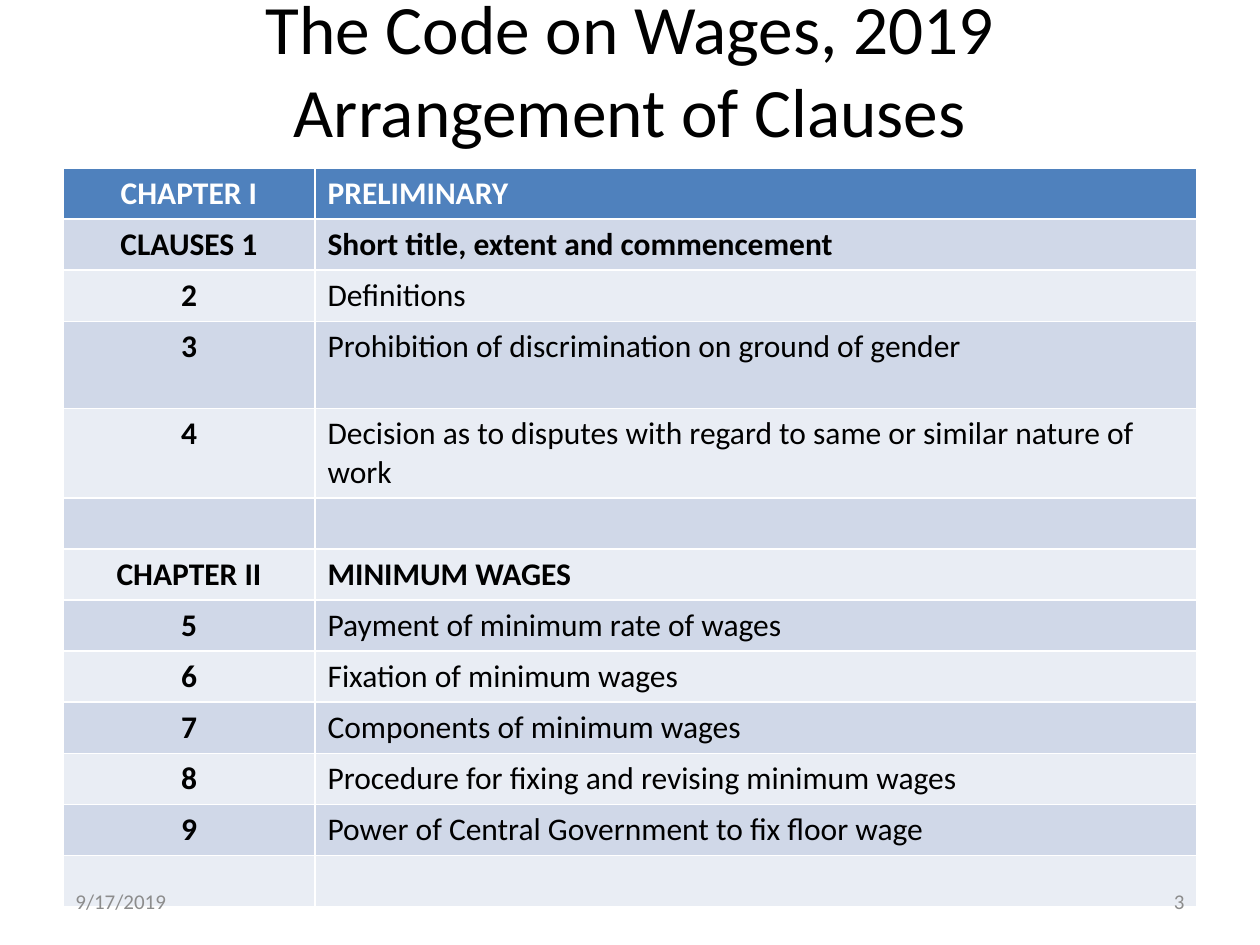
"""Build the slide listing the clauses of the Code on Wages, 2019."""
import pptx
import pptx.util
import pptx.dml.color
import pptx.enum.text

Pt = pptx.util.Pt
Align = pptx.enum.text.PP_ALIGN
Anchor = pptx.enum.text.MSO_ANCHOR


def paint(hue):
    return pptx.dml.color.RGBColor.from_string(hue)


def write(para, lines, size, hue, align, bold=False):
    para.alignment = align
    for num, line in enumerate(lines):
        if num:
            para.add_line_break()
        run = para.add_run()
        run.text = line
        run.font.name = "Calibri"
        run.font.size = Pt(size)
        run.font.bold = bold
        run.font.color.rgb = paint(hue)


deck = pptx.Presentation()
deck.slide_width, deck.slide_height = Pt(720), Pt(540)
slide = deck.slides.add_slide(deck.slide_layouts[6])

rows = [
    ("CHAPTER I", "PRELIMINARY", True),
    ("CLAUSES 1", "Short title, extent and commencement", True),
    ("2", "Definitions", False),
    ("3", "Prohibition of discrimination on ground of gender", False),
    ("4", "Decision as to disputes with regard to same or similar nature of work", False),
    ("", "", False),
    ("CHAPTER II", "MINIMUM WAGES", True),
    ("5", "Payment of minimum rate of wages", False),
    ("6", "Fixation of minimum wages", False),
    ("7", "Components of minimum wages", False),
    ("8", "Procedure for fixing and revising minimum wages", False),
    ("9", "Power of Central Government to fix floor wage", False),
    ("", "", False),
]
tall = (3, 4)
table = slide.shapes.add_table(len(rows), 2, Pt(36), Pt(96), Pt(648), Pt(417)).table
table.columns[0].width = Pt(144)
table.columns[1].width = Pt(504)

for num, (clause, title, strong) in enumerate(rows):
    table.rows[num].height = Pt(49.7 if num in tall else 29.2)
    fill = "4F81BD" if num == 0 else ("E9EDF4", "D0D8E8")[num % 2]
    ink = "000000" if num else "FFFFFF"
    parts = ((clause, Align.CENTER, True), (title, Align.LEFT, strong))
    for col, (text, align, bold) in enumerate(parts):
        cell = table.cell(num, col)
        cell.fill.solid()
        cell.fill.fore_color.rgb = paint(fill)
        if text:
            write(cell.text_frame.paragraphs[0], [text], 18, ink, align, bold)

labels = [
    (["The Code on Wages, 2019", "Arrangement of Clauses"], 36, 0, 648, 78, 39.6, "000000", Align.CENTER),
    (["9/17/2019"], 36, 500.5, 168, 28.75, 12, "8C8C8C", Align.LEFT),
    (["3"], 516, 500.5, 168, 28.75, 12, "8C8C8C", Align.RIGHT),
]
for lines, left, top, width, height, size, hue, align in labels:
    frame = slide.shapes.add_textbox(Pt(left), Pt(top), Pt(width), Pt(height)).text_frame
    frame.word_wrap = True
    frame.auto_size = pptx.enum.text.MSO_AUTO_SIZE.NONE
    frame.vertical_anchor = Anchor.MIDDLE
    write(frame.paragraphs[0], lines, size, hue, align)

deck.save("out.pptx")
